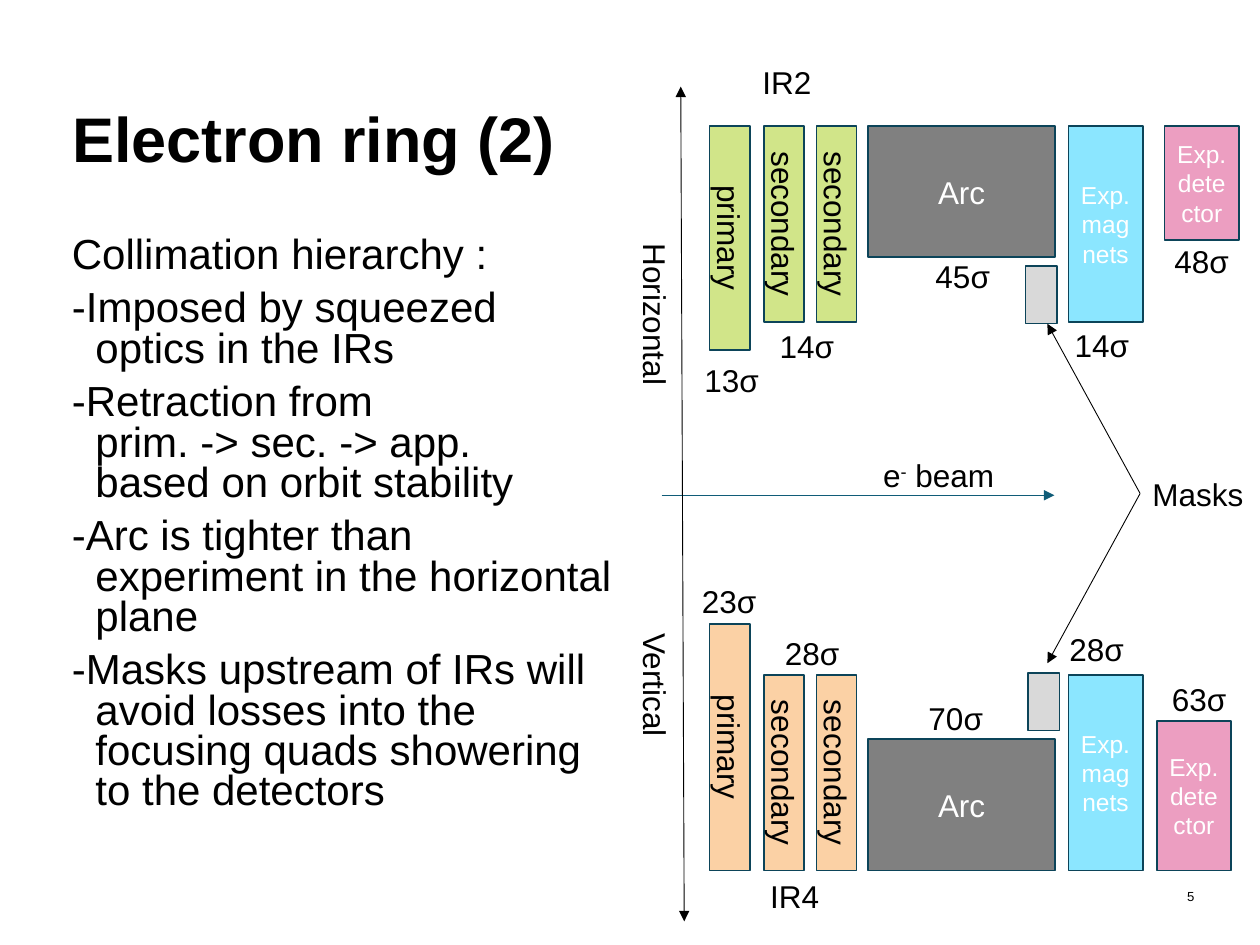
from dataclasses import dataclass

from lxml.etree import SubElement as Sub
from pptx import Presentation
from pptx.dml.color import RGBColor as Rgb
from pptx.enum.shapes import MSO_CONNECTOR as Link, MSO_SHAPE as Form
from pptx.enum.text import MSO_ANCHOR as Anchor, MSO_AUTO_SIZE as Fit, PP_ALIGN as Align
from pptx.oxml.ns import qn
from pptx.shapes.autoshape import Shape
from pptx.slide import Slide
from pptx.text.text import TextFrame
from pptx.util import Pt


@dataclass(frozen=True)
class Theme:
    font: str = "Arial"
    ink: str = "000000"
    pale: str = "FFFFFF"
    edge: str = "0C4459"
    beam: str = "105C78"
    green: str = "D1E589"
    peach: str = "FBD1A5"
    gray: str = "808080"
    blue: str = "8BE6FF"
    pink: str = "EC9EC1"
    mask: str = "D9D9D9"
    title: float = 36
    body: float = 24
    label: float = 18
    small: float = 14
    page: float = 7.5


LOOK = Theme()
TOP, BASE = 72, 497.5


@dataclass(frozen=True)
class Bar:
    text: str
    left: float
    top: float
    width: float
    height: float
    fill: str
    ink: str = LOOK.pale
    size: float = LOOK.label
    turn: bool = False


@dataclass(frozen=True)
class Label:
    text: str
    left: float
    top: float
    width: float = 75
    turn: float = 0


@dataclass(frozen=True)
class Arrow:
    start: tuple[float, float]
    end: tuple[float, float]
    color: str = LOOK.ink
    both: bool = False


def put(frame: TextFrame, text: str, *, size: float = LOOK.label, color: str = LOOK.ink,
        bold: bool = False, align: Align = Align.LEFT, anchor: Anchor = Anchor.TOP,
        lead: float = 1, gap: float = 0, hang: float = 0) -> None:
    frame.word_wrap = True
    frame.auto_size = Fit.NONE
    frame.vertical_anchor = anchor
    for row, line in enumerate(text.split("\n")):
        para = frame.add_paragraph() if row else frame.paragraphs[0]
        para.alignment = align
        para.line_spacing = lead
        para.space_before = Pt(gap if row else 0)
        if hang:
            props = para._p.get_or_add_pPr()
            props.set("marL", str(Pt(hang)))
            props.set("indent", str(-Pt(hang)))
        for spot, part in enumerate(line.split("^")):
            for step, bit in enumerate(part.split("\v")):
                if step:
                    para.add_line_break()
                run = para.add_run()
                run.text = bit
                font = run.font
                font.name, font.size, font.bold = LOOK.font, Pt(size), bold
                font.color.rgb = Rgb.from_string(color)
                if spot % 2:
                    font._element.set("baseline", "30000")


def place(shape: Shape, left: float, top: float, width: float, height: float) -> None:
    shape.left, shape.top = Pt(left), Pt(top)
    shape.width, shape.height = Pt(width), Pt(height)


def add_box(slide: Slide, left: float, top: float, width: float, height: float) -> Shape:
    return slide.shapes.add_textbox(Pt(left), Pt(top), Pt(width), Pt(height))


def draw_bar(slide: Slide, bar: Bar) -> None:
    shape = slide.shapes.add_shape(
        Form.RECTANGLE, Pt(bar.left), Pt(bar.top), Pt(bar.width), Pt(bar.height))
    shape.shadow.inherit = False
    shape.fill.solid()
    shape.fill.fore_color.rgb = Rgb.from_string(bar.fill)
    shape.line.color.rgb = Rgb.from_string(LOOK.edge)
    shape.line.width = Pt(1)
    if bar.text:
        put(shape.text_frame, bar.text, size=bar.size, color=bar.ink,
            align=Align.CENTER, anchor=Anchor.MIDDLE)
    if bar.turn:
        shape.text_frame._txBody.bodyPr.set("vert", "vert")


def draw_label(slide: Slide, label: Label) -> None:
    box = add_box(slide, label.left, label.top, label.width, 29)
    box.rotation = label.turn
    put(box.text_frame, label.text)


def draw_arrow(slide: Slide, arrow: Arrow) -> None:
    line = slide.shapes.add_connector(
        Link.STRAIGHT, *map(Pt, arrow.start), *map(Pt, arrow.end))
    line.line.color.rgb = Rgb.from_string(arrow.color)
    line.line.width = Pt(0.5)
    props = line._element.spPr
    edge = props.find(qn("a:ln"))
    for tag in ("a:headEnd", "a:tailEnd") if arrow.both else ("a:tailEnd",):
        Sub(edge, qn(tag), type="triangle")
    Sub(props, qn("a:effectLst"))


def stack(low: bool) -> list[Bar]:
    tint = LOOK.peach if low else LOOK.green

    def make(text: str, left: float, width: float, height: float, fill: str, **form) -> Bar:
        top = BASE - height if low else TOP
        return Bar(text, left, top, width, height, fill, **form)

    side = dict(ink=LOOK.ink, turn=True)
    return [
        make("primary", 405.5, 23, 141 if low else 128, tint, **side),
        make("secondary", 436.5, 23, 112, tint, **side),
        make("secondary", 466.5, 23, 112, tint, **side),
        make("Arc", 496, 107, 75, LOOK.gray),
        make("Exp. magnets", 610.5, 42.5, 112, LOOK.blue, size=LOOK.small),
        make("Exp. detector", 661 if low else 665.5, 42.5, 85.5 if low else 65,
             LOOK.pink, size=LOOK.small),
    ]


MASKS = [
    Bar("", 586, 152, 18, 33, LOOK.mask),
    Bar("", 587.5, 384.5, 18, 33, LOOK.mask),
]

LABELS = [
    Label("IR2", 428.5, 32.5, 121),
    Label("IR4", 433, 497.5, 121),
    Label("Horizontal", 314, 178, 121, 90),
    Label("Vertical", 314, 401, 121, 90),
    Label("13σ", 395.5, 203),
    Label("14σ", 438.5, 183.5),
    Label("45σ", 527.5, 143.5),
    Label("14σ", 607, 183),
    Label("48σ", 664, 134.5),
    Label("23σ", 394, 329),
    Label("28σ", 441.5, 358.5),
    Label("70σ", 523.5, 396, 52),
    Label("28σ", 604, 356.5),
    Label("63σ", 662.5, 385),
    Label("e^-^ beam", 497.5, 257, 121),
    Label("Masks", 651.5, 268),
]

ARROWS = [
    Arrow((378, 283), (602.5, 283), LOOK.beam),
    Arrow((389, 49.5), (391, 526.5), both=True),
    Arrow((651.5, 282), (598.5, 185)),
    Arrow((651.5, 282), (598.5, 379)),
]

POINTS = """Collimation hierarchy :
-Imposed by squeezed optics in the IRs
-Retraction from\vprim. -> sec. -> app.\vbased on orbit stability
-Arc is tighter than experiment in the horizontal plane
-Masks upstream of IRs will avoid losses into the focusing quads showering to the detectors"""


def main() -> None:
    deck = Presentation()
    deck.slide_width, deck.slide_height = Pt(720), Pt(540)
    slide = deck.slides.add_slide(deck.slide_layouts[5])

    title = slide.shapes.title
    place(title, 34, 29, 652, 104)
    put(title.text_frame, "Electron ring (2)", size=LOOK.title, bold=True,
        anchor=Anchor.MIDDLE, lead=0.9)

    body = add_box(slide, 34, 132, 326, 343)
    put(body.text_frame, POINTS, size=LOOK.body, lead=0.8, gap=7.5, hang=13.5)

    page = add_box(slide, 661, 497.5, 25, 29)
    frame = page.text_frame
    frame.margin_left = frame.margin_top = frame.margin_bottom = 0
    frame.margin_right = Pt(3.5)
    put(frame, "5", size=LOOK.page, align=Align.RIGHT, anchor=Anchor.MIDDLE)

    for bar in stack(False) + stack(True) + MASKS:
        draw_bar(slide, bar)
    for label in LABELS:
        draw_label(slide, label)
    for arrow in ARROWS:
        draw_arrow(slide, arrow)

    deck.save("out.pptx")


if __name__ == "__main__":
    main()
